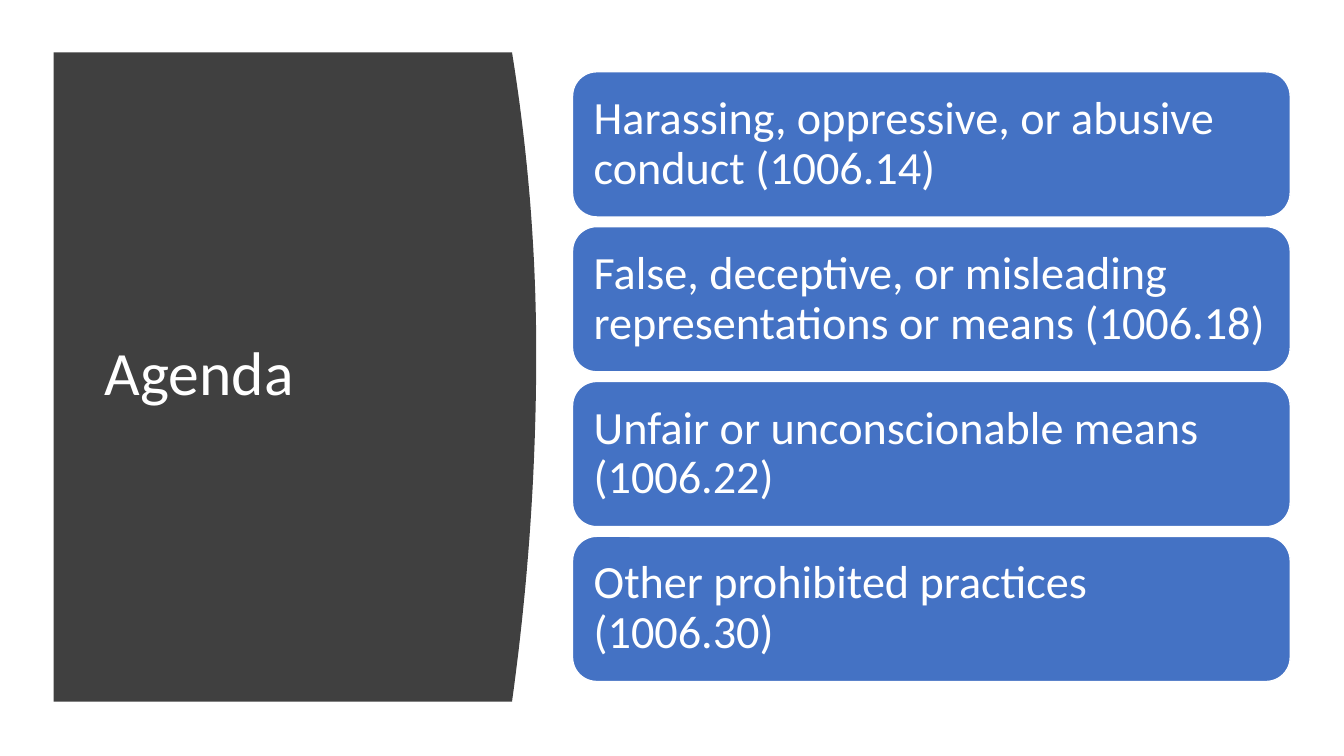
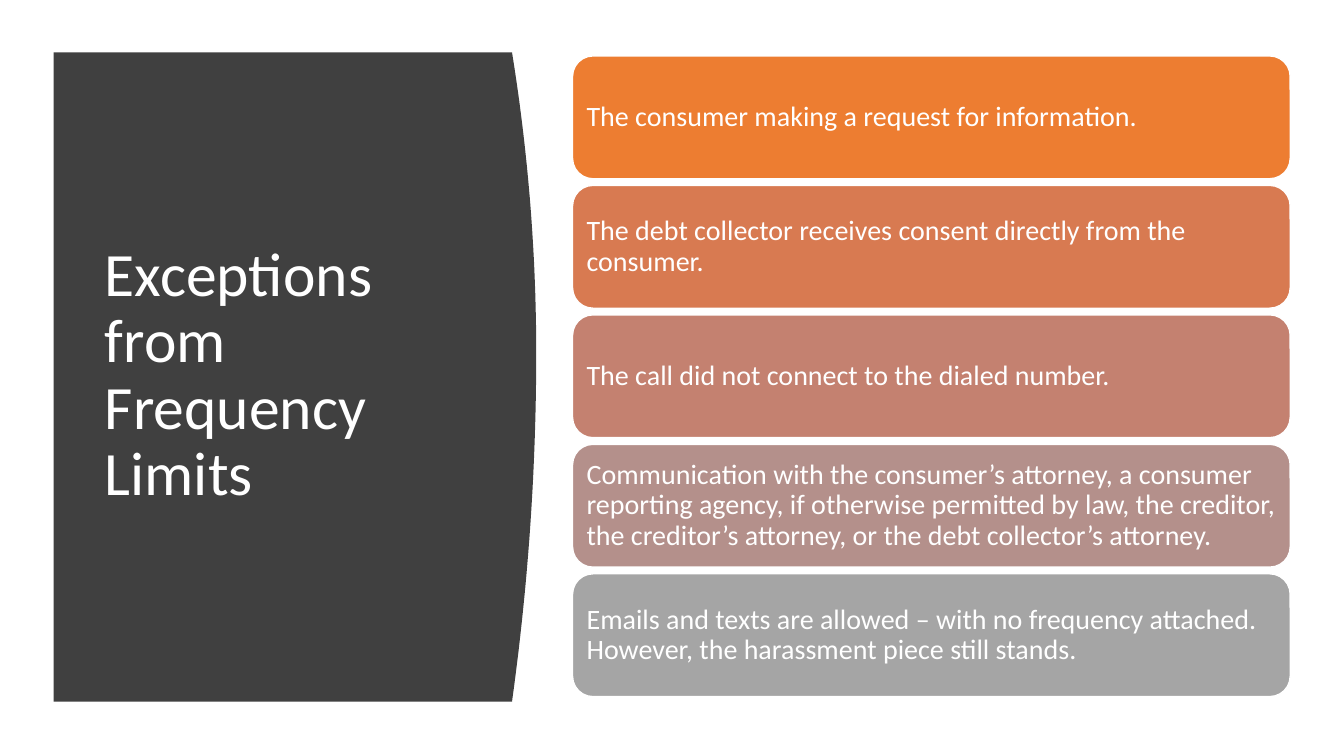
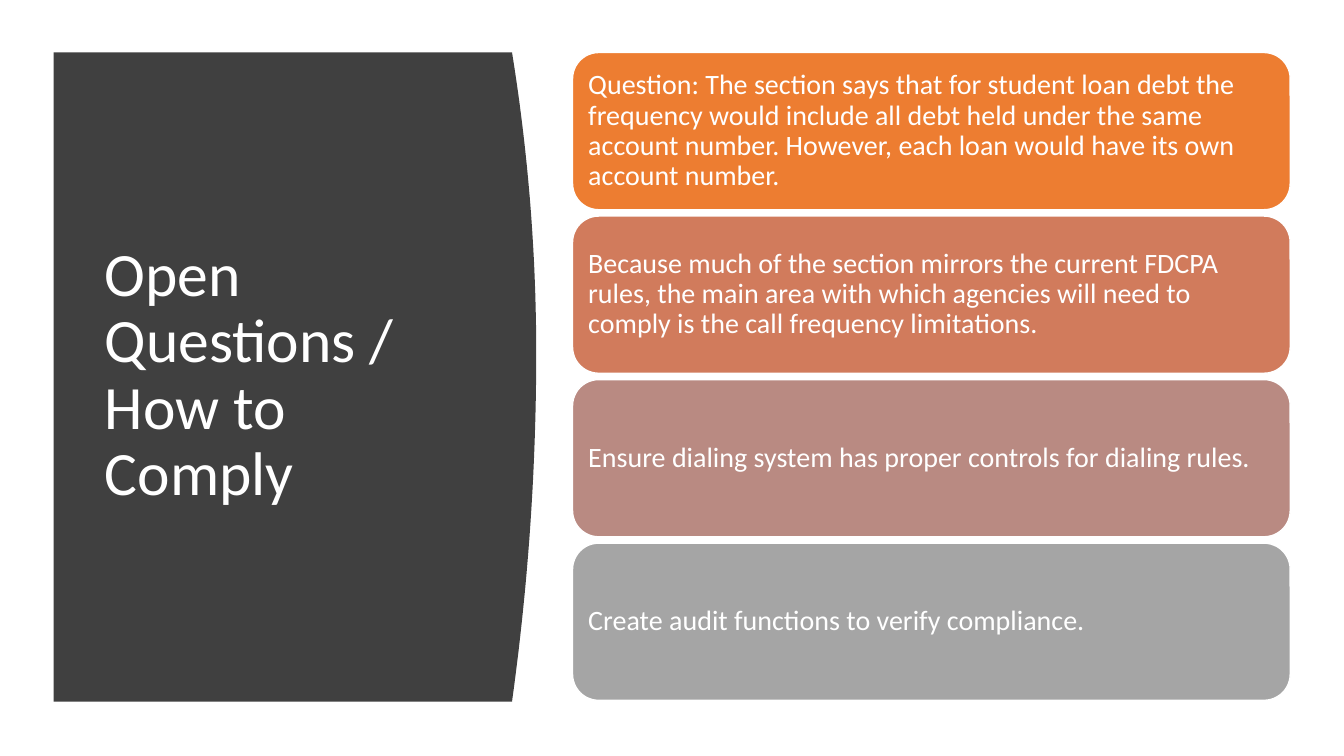
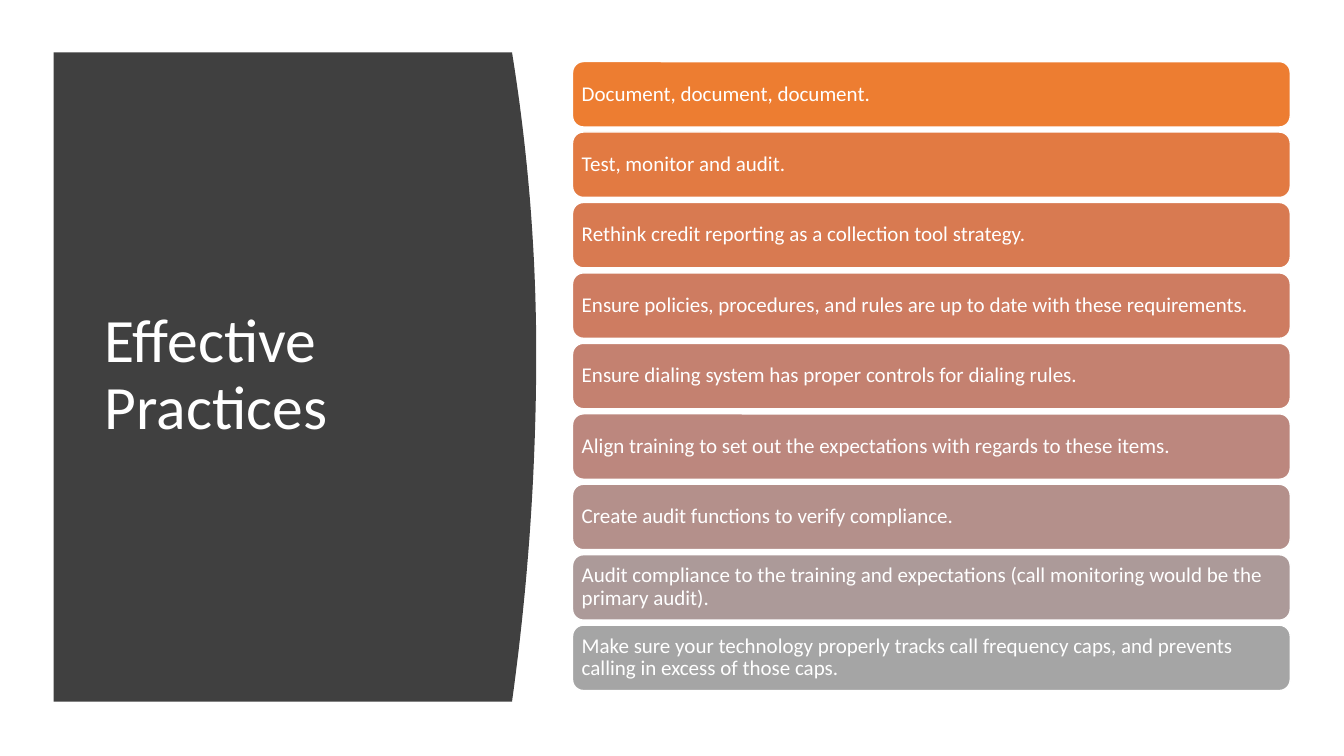
from dataclasses import dataclass
from typing import Any

from pptx import Presentation
from pptx.dml.color import RGBColor
from pptx.enum.shapes import MSO_SHAPE
from pptx.enum.text import MSO_ANCHOR, MSO_AUTO_SIZE, PP_ALIGN
from pptx.util import Inches, Pt

WIDE, HIGH = Inches(40 / 3), Inches(7.5)
FONT = "Calibri"
WHITE = RGBColor(0xFF, 0xFF, 0xFF)
DARK = RGBColor(0x40, 0x40, 0x40)
BLUE = RGBColor(0x44, 0x72, 0xC4)
# Orange to grey, in equal steps
RAMP = (
    RGBColor(0xED, 0x7D, 0x31),
    RGBColor(0xE2, 0x7A, 0x42),
    RGBColor(0xD8, 0x7A, 0x51),
    RGBColor(0xCE, 0x7C, 0x61),
    RGBColor(0xC4, 0x81, 0x70),
    RGBColor(0xBC, 0x87, 0x7E),
    RGBColor(0xB4, 0x90, 0x8B),
    RGBColor(0xAC, 0x9A, 0x99),
    RGBColor(0xA5, 0xA5, 0xA5),
)

# All places are in columns and rows of a 100 by 100 grid
EDGE, TOP, FOOT = 4, 6.93, 92.8
SIDE, BULGE, PEAK = 38.1, 1.8, 46.7
STEPS = 40
CARD_X, CARD_W = 42.6, 53.4
TITLE_X, TITLE_Y, TITLE_H = 7.05, 14.8, 69.87


@dataclass(frozen=True)
class Stack:
    """Cards spaced evenly: rows of the first and last top, card height."""
    first: float
    last: float
    high: float
    size: int
    inset: float
    blend: bool = True


@dataclass(frozen=True)
class Page:
    title: str
    stack: Stack
    cards: tuple[str, ...]
    wide: float = 28.05


PAGES = (
    Page("Agenda", Stack(9.5, 70.95, 19.2, 33, 0.14, False), (
        "Harassing, oppressive, or abusive conduct (1006.14)",
        "False, deceptive, or misleading representations or means (1006.18)",
        "Unfair or unconscionable means (1006.22)",
        "Other prohibited practices (1006.30)",
    )),
    Page("Exceptions from Frequency Limits", Stack(7.4, 75.9, 16.25, 20, 0.08), (
        "The consumer making a request for information.",
        "The debt collector receives consent directly from the consumer.",
        "The call did not connect to the dialed number.",
        "Communication with the consumer’s attorney, a consumer reporting agency, "
        "if otherwise permitted by law, the creditor, the creditor’s attorney, "
        "or the debt collector’s attorney.",
        "Emails and texts are allowed – with no frequency attached. "
        "However, the harassment piece still stands.",
    )),
    Page("Open Questions / How to Comply", Stack(6.95, 71.85, 20.8, 20, 0.08), (
        "Question: The section says that for student loan debt the frequency would "
        "include all debt held under the same account number. "
        "However, each loan would have its own account number.",
        "Because much of the section mirrors the current FDCPA rules, the main area "
        "with which agencies will need to comply is the call frequency limitations.",
        "Ensure dialing system has proper controls for dialing rules.",
        "Create audit functions to verify compliance.",
    )),
    Page("Effective Practices", Stack(8.15, 82.7, 8.65, 15, 0.06), (
        "Document, document, document.",
        "Test, monitor and audit.",
        "Rethink credit reporting as a collection tool strategy.",
        "Ensure policies, procedures, and rules are up to date with these requirements.",
        "Ensure dialing system has proper controls for dialing rules.",
        "Align training to set out the expectations with regards to these items.",
        "Create audit functions to verify compliance.",
        "Audit compliance to the training and expectations "
        "(call monitoring would be the primary audit).",
        "Make sure your technology properly tracks call frequency caps, "
        "and prevents calling in excess of those caps.",
    ), 31.6),
)


def col(n: float) -> int:
    return round(WIDE * n / 100)


def row(n: float) -> int:
    return round(HIGH * n / 100)


def apply(item: Any, **values: Any) -> None:
    for name, value in values.items():
        setattr(item, name, value)


def shade(part: float) -> RGBColor:
    """Colour at a share, 0 to 1, of the ramp."""
    spot = part * (len(RAMP) - 1)
    low = min(int(spot), len(RAMP) - 2)
    pairs = zip(RAMP[low], RAMP[low + 1])
    return RGBColor(*(round(a + (b - a) * (spot - low)) for a, b in pairs))


def paint(shape: Any, fill: RGBColor) -> None:
    shape.shadow.inherit = False
    shape.fill.solid()
    shape.fill.fore_color.rgb = fill


def write(shape: Any, text: str, size: int, inset: float | None = None) -> None:
    frame = shape.text_frame
    frame.text = text
    apply(frame, word_wrap=True, auto_size=MSO_AUTO_SIZE.NONE,
          vertical_anchor=MSO_ANCHOR.MIDDLE)
    if inset is not None:
        sides = ("left", "top", "right", "bottom")
        apply(frame, **{f"margin_{side}": Inches(inset) for side in sides})
    line = frame.paragraphs[0]
    apply(line, alignment=PP_ALIGN.LEFT, line_spacing=0.9)
    font = line.runs[0].font
    apply(font, name=FONT, size=Pt(size))
    font.color.rgb = WHITE


def bow(y: float) -> float:
    """Column of the panel's curved side at row y."""
    reach = PEAK - TOP if y < PEAK else FOOT - PEAK
    return SIDE + BULGE * (1 - ((y - PEAK) / reach) ** 2)


def panel(slide: Any) -> None:
    rows = [TOP + (FOOT - TOP) * i / STEPS for i in range(STEPS + 1)]
    pen = slide.shapes.build_freeform(col(EDGE), row(TOP))
    pen.add_line_segments([(col(bow(y)), row(y)) for y in rows]
                          + [(col(EDGE), row(FOOT))])
    shape = pen.convert_to_shape()
    paint(shape, DARK)
    shape.line.fill.background()


def head(slide: Any, page: Page) -> None:
    title = slide.shapes.title
    slide.shapes.element.append(title.element)  # in front of the panel
    apply(title, left=col(TITLE_X), top=row(TITLE_Y),
          width=col(page.wide), height=row(TITLE_H))
    write(title, page.title, 44)


def cards(slide: Any, page: Page) -> None:
    stack = page.stack
    for i, text in enumerate(page.cards):
        part = i / (len(page.cards) - 1)
        top = stack.first + (stack.last - stack.first) * part
        card = slide.shapes.add_shape(
            MSO_SHAPE.ROUNDED_RECTANGLE,
            col(CARD_X), row(top), col(CARD_W), row(stack.high))
        paint(card, shade(part) if stack.blend else BLUE)
        card.line.color.rgb = WHITE
        card.line.width = Pt(1)
        write(card, text, stack.size, stack.inset)


def main() -> None:
    deck = Presentation()
    apply(deck, slide_width=WIDE, slide_height=HIGH)
    layout = deck.slide_layouts.get_by_name("Title Only")
    for page in PAGES:
        slide = deck.slides.add_slide(layout)
        panel(slide)
        head(slide, page)
        cards(slide, page)
    deck.save("out.pptx")


if __name__ == "__main__":
    main()
